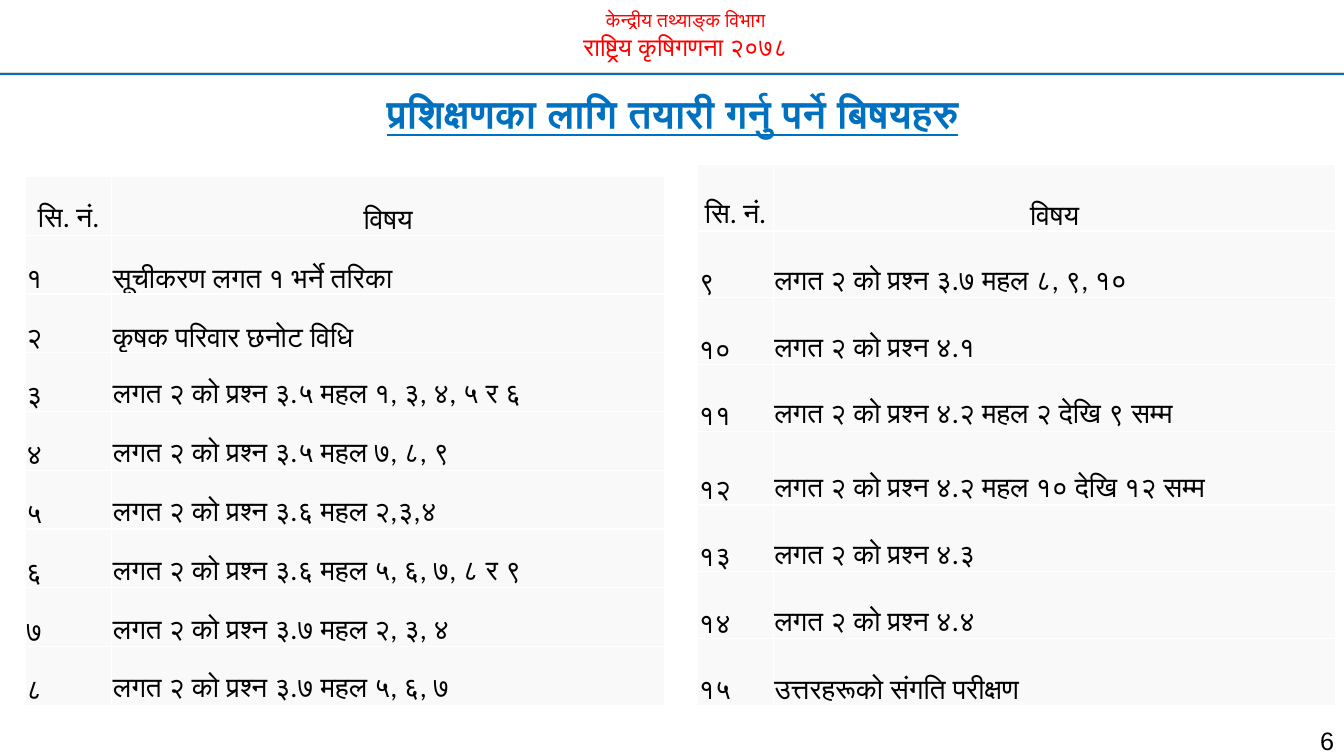
"""Build the training preparation topics slide."""
from lxml import etree
from pptx import Presentation
from pptx.dml.color import RGBColor
from pptx.enum.shapes import MSO_CONNECTOR
from pptx.enum.text import MSO_ANCHOR, PP_ALIGN
from pptx.oxml.ns import qn
from pptx.util import Inches, Pt

LEFT, CENTER, RIGHT = PP_ALIGN.LEFT, PP_ALIGN.CENTER, PP_ALIGN.RIGHT
BOTTOM = MSO_ANCHOR.BOTTOM
STRAIGHT = MSO_CONNECTOR.STRAIGHT

RED, BLUE, BLACK, WHITE = "FF0000", "0070C0", "000000", "FFFFFF"
RULE_GREY, CELL_GREY = "D8D8D8", "F9F9F9"
SLIDE_WIDTH, SLIDE_HEIGHT = 13.33, 7.5

DEPARTMENT = "केन्द्रीय तथ्याङ्क विभाग"
CENSUS = "राष्ट्रिय कृषिगणना २०७८"
TITLE = "प्रशिक्षणका लागि तयारी गर्नु पर्ने बिषयहरु"
PAGE_NUMBER = "6"
HEADINGS = ("सि. नं.", "विषय")
RULES = [(0.73, BLUE, 1.5), (0.72, RULE_GREY, 0.75)]

FIRST_TOPICS = [
    ("१", "सूचीकरण लगत १ भर्ने तरिका"),
    ("२", "कृषक परिवार छनोट विधि"),
    ("३", "लगत २ को प्रश्न ३.५ महल १, ३, ४, ५ र ६"),
    ("४", "लगत २ को प्रश्न ३.५ महल ७, ८, ९"),
    ("५", "लगत २ को प्रश्न ३.६ महल २,३,४"),
    ("६", "लगत २ को प्रश्न ३.६ महल ५, ६, ७, ८ र ९"),
    ("७", "लगत २ को प्रश्न ३.७ महल २, ३, ४"),
    ("८", "लगत २ को प्रश्न ३.७ महल ५, ६, ७"),
]
LAST_TOPICS = [
    ("९", "लगत २ को प्रश्न ३.७ महल ८, ९, १०"),
    ("१०", "लगत २ को प्रश्न ४.१"),
    ("११", "लगत २ को प्रश्न ४.२ महल २ देखि ९ सम्म"),
    ("१२", "लगत २ को प्रश्न ४.२ महल १० देखि १२ सम्म"),
    ("१३", "लगत २ को प्रश्न ४.३"),
    ("१४", "लगत २ को प्रश्न ४.४"),
    ("१५", "उत्तरहरूको संगति परीक्षण"),
]
TOPIC_TABLES = [
    {"topics": FIRST_TOPICS, "left": 0.25, "top": 1.75, "height": 5.25,
     "columns": (0.86, 5.48), "tall_rows": {}},
    {"topics": LAST_TOPICS, "left": 6.92, "top": 1.63, "height": 5.37,
     "columns": (0.75, 5.58), "tall_rows": {4: 0.73}},
]


def color(value):
    return RGBColor.from_string(value)


def write(paragraph, text, size=20, font="Calibri", ink=BLACK, align=LEFT,
          bold=False, underline=False, spacing=None):
    paragraph.alignment = align
    if spacing:
        paragraph.line_spacing = spacing
    run = paragraph.add_run()
    run.text = text
    run.font.size = Pt(size)
    run.font.name = font
    run.font.bold = bold
    run.font.underline = underline
    run.font.color.rgb = color(ink)


def add_text(slide, box, *lines):
    frame = slide.shapes.add_textbox(*map(Inches, box)).text_frame
    frame.word_wrap = True
    for index, (text, style) in enumerate(lines):
        paragraph = frame.add_paragraph() if index else frame.paragraphs[0]
        write(paragraph, text, **style)


def add_rule(slide, y, ink, width):
    rule = slide.shapes.add_connector(
        STRAIGHT, 0, Inches(y), Inches(SLIDE_WIDTH), Inches(y))
    rule.line.color.rgb = color(ink)
    rule.line.width = Pt(width)
    etree.SubElement(rule.element.spPr, qn("a:effectLst"))


def add_borders(cell):
    properties = cell._tc.get_or_add_tcPr()
    for position, side in enumerate(("lnL", "lnR", "lnT", "lnB")):
        border = etree.Element(qn(f"a:{side}"), w=str(Pt(1)))
        fill = etree.SubElement(border, qn("a:solidFill"))
        etree.SubElement(fill, qn("a:srgbClr"), val=WHITE)
        properties.insert(position, border)


def add_topic_table(slide, topics, left, top, height, columns, tall_rows):
    rows = [HEADINGS, *topics]
    row_height = (height - sum(tall_rows.values())) / (len(rows) - len(tall_rows))
    table = slide.shapes.add_table(
        len(rows), len(columns), Inches(left), Inches(top),
        Inches(sum(columns)), Inches(height)).table
    table.first_row = table.horz_banding = False
    for index, width in enumerate(columns):
        table.columns[index].width = Inches(width)
    for row, entries in enumerate(rows):
        table.rows[row].height = Inches(tall_rows.get(row, row_height))
        for column, text in enumerate(entries):
            cell = table.cell(row, column)
            cell.margin_left = cell.margin_right = cell.margin_top = Inches(0.01)
            cell.margin_bottom = 0
            cell.vertical_anchor = BOTTOM
            cell.fill.solid()
            cell.fill.fore_color.rgb = color(CELL_GREY)
            add_borders(cell)
            write(cell.text_frame.paragraphs[0], text,
                  align=LEFT if row else CENTER)


def main():
    deck = Presentation()
    deck.slide_width, deck.slide_height = Inches(SLIDE_WIDTH), Inches(SLIDE_HEIGHT)
    slide = deck.slides.add_slide(deck.slide_layouts[6])
    add_text(slide, (1.25, 0.03, 11.1, 0.64),
             (DEPARTMENT, {"size": 14, "ink": RED, "align": CENTER}),
             (CENSUS, {"size": 18, "ink": RED, "align": CENTER}))
    for y, ink, width in RULES:
        add_rule(slide, y, ink, width)
    add_text(slide, (0.13, 0.84, 13.08, 0.57),
             (TITLE, {"size": 28, "ink": BLUE, "align": CENTER,
                      "bold": True, "underline": True}))
    for topic_table in TOPIC_TABLES:
        add_topic_table(slide, **topic_table)
    add_text(slide, (12.3, 7, 1.03, 0.42),
             (PAGE_NUMBER, {"size": 18, "font": "Arial", "align": RIGHT,
                            "spacing": 1.5}))
    deck.save("out.pptx")


if __name__ == "__main__":
    main()
